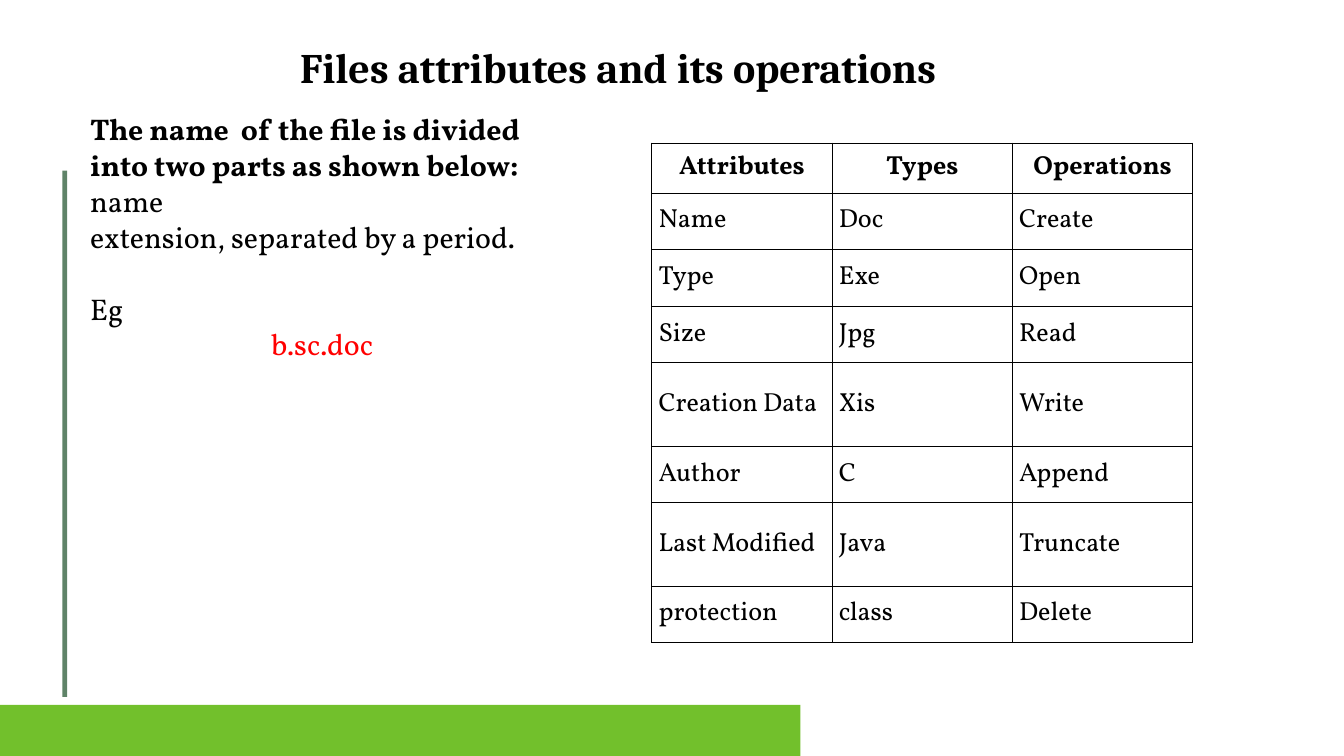
from dataclasses import dataclass

from lxml import etree
from pptx import Presentation
from pptx import util as u
from pptx.dml.color import RGBColor
from pptx.enum import shapes, text
from pptx.oxml import ns

LEFT, MID = text.PP_ALIGN.LEFT, text.PP_ALIGN.CENTER


@dataclass(frozen=True)
class Theme:
    ink: str = "000000"
    paper: str = "FFFFFF"
    lime: str = "72C02C"
    moss: str = "5F8368"
    red: str = "FF0000"
    head: str = "Cambria"
    font: str = "Vollkorn"
    title: int = 45
    body: int = 32
    cell: int = 28


T = Theme()

INTRO = [
    ("The name  of the file is divided into two parts as shown below:",
     dict(bold=True)),
    ("name", {}),
    ("extension, separated by a period.", {}),
    ("Eg", dict(gap=38.5)),
    ("b.sc.doc", dict(color=T.red, align=MID)),
]

ROWS = [
    ("Attributes", "Types", "Operations"),
    ("Name", "Doc", "Create"),
    ("Type", "Exe", "Open"),
    ("Size", "Jpg", "Read"),
    ("Creation Data", "Xis", "Write"),
    ("Author", "C", "Append"),
    ("Last Modified", "Java", "Truncate"),
    ("protection", "class", "Delete"),
]
HEAD, LOW, TALL = 0.68, 0.77, 1.24
TALL_ROWS = {"Creation Data", "Last Modified"}


def inch(box):
    return [u.Inches(v) for v in box]


def write(para, words, size=T.body, font=T.font, color=T.ink, bold=False,
          align=LEFT, gap=0):
    """Fill one paragraph with unbulleted text."""
    props = para._p.get_or_add_pPr()
    props.set("marL", "0")
    props.set("indent", "0")
    etree.SubElement(props, ns.qn("a:buNone"))
    para.alignment = align
    para.space_before = u.Pt(gap)
    run = para.add_run()
    run.text = words
    run.font.size, run.font.name, run.font.bold = u.Pt(size), font, bold
    run.font.color.rgb = RGBColor.from_string(color)


def place(holder, box):
    """Move a placeholder and make its text start at the top."""
    holder.left, holder.top, holder.width, holder.height = inch(box)
    frame = holder.text_frame
    frame.word_wrap = True
    frame.auto_size = text.MSO_AUTO_SIZE.NONE
    frame.vertical_anchor = text.MSO_ANCHOR.TOP
    return frame


def title(slide, box):
    frame = place(slide.shapes.title, box)
    write(frame.paragraphs[0], "Files attributes and its operations",
          size=T.title, font=T.head, bold=True, align=MID)


def intro(slide, box):
    frame = place(slide.placeholders[1], box)
    for i, (words, style) in enumerate(INTRO):
        para = frame.add_paragraph() if i else frame.paragraphs[0]
        write(para, words, **style)


def block(slide, box, color):
    shape = slide.shapes.add_shape(shapes.MSO_SHAPE.RECTANGLE, *inch(box))
    shape.shadow.inherit = False
    shape.fill.solid()
    shape.fill.fore_color.rgb = RGBColor.from_string(color)
    shape.line.fill.background()


def border(cell):
    props = cell._tc.get_or_add_tcPr()
    for i, side in enumerate(("lnL", "lnR", "lnT", "lnB")):
        line = etree.Element(ns.qn("a:" + side), w=str(u.Pt(1)))
        fill = etree.SubElement(line, ns.qn("a:solidFill"))
        etree.SubElement(fill, ns.qn("a:srgbClr"), val=T.ink)
        props.insert(i, line)


def grid(slide, box):
    """Table of file attributes, types and operations."""
    table = slide.shapes.add_table(len(ROWS), len(ROWS[0]), *inch(box)).table
    table.first_row = table.horz_banding = False
    for col in table.columns:
        col.width = u.Inches(box[2] / len(ROWS[0]))
    for r, words in enumerate(ROWS):
        top = r == 0
        high = HEAD if top else TALL if words[0] in TALL_ROWS else LOW
        table.rows[r].height = u.Inches(high)
        for c, word in enumerate(words):
            cell = table.cell(r, c)
            cell.vertical_anchor = text.MSO_ANCHOR.MIDDLE
            side = 0.04 if top and c == 0 else 0.1
            cell.margin_left = cell.margin_right = u.Inches(side)
            cell.margin_top = cell.margin_bottom = u.Inches(
                0.1 if top else 0.15)
            cell.fill.solid()
            cell.fill.fore_color.rgb = RGBColor.from_string(T.paper)
            border(cell)
            write(cell.text_frame.paragraphs[0], word, size=T.cell,
                  bold=top, align=MID if top else LEFT)


def main():
    deck = Presentation()
    deck.slide_width, deck.slide_height = u.Inches(20), u.Inches(11.25)
    slide = deck.slides.add_slide(deck.slide_layouts[1])
    block(slide, (0, 10.49, 11.91, 0.76), T.lime)
    block(slide, (0.93, 2.54, 0.07, 7.83), T.moss)
    intro(slide, (1.24, 1.6, 7.11, 7.82))
    title(slide, (2.11, 0.57, 14.17, 1.25))
    grid(slide, (9.7, 2.13, 8.05, 7))
    deck.save("out.pptx")


if __name__ == "__main__":
    main()
